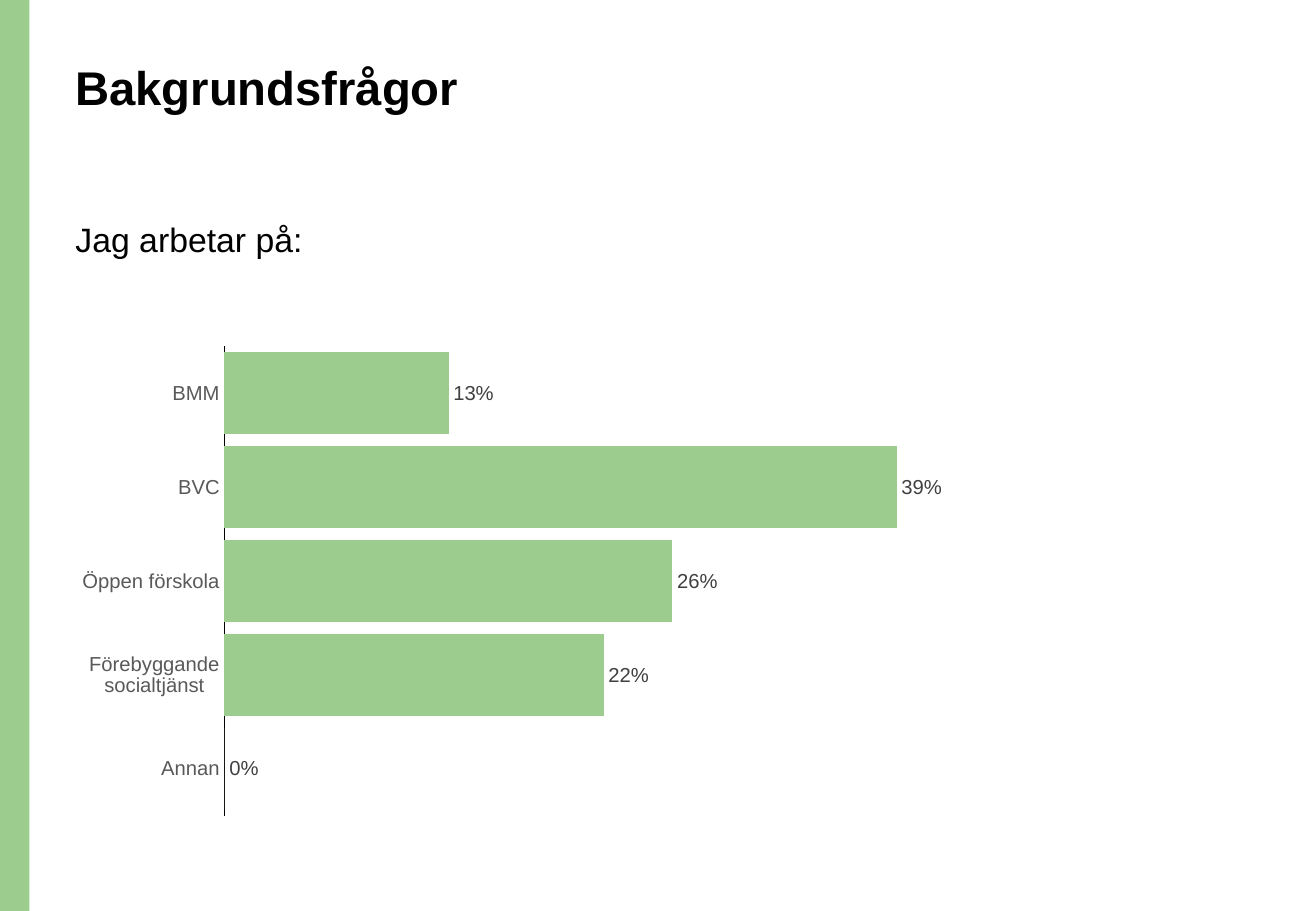
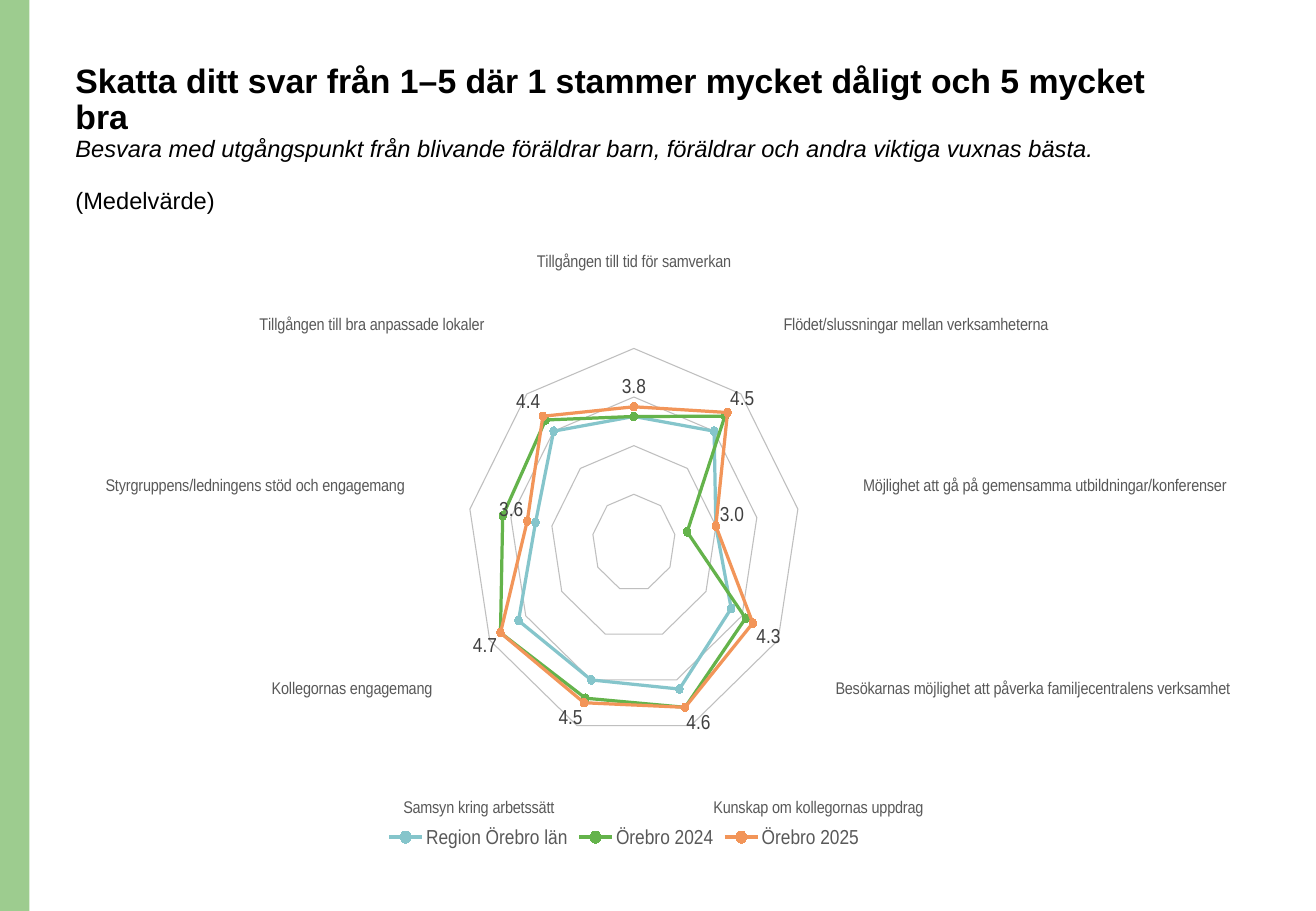
"""Build two survey result slides: a bar chart and a radar chart."""
from lxml import etree
from pptx import Presentation
from pptx.chart.data import CategoryChartData
from pptx.dml.color import RGBColor
from pptx.enum.chart import XL_CHART_TYPE, XL_LEGEND_POSITION, XL_MARKER_STYLE, XL_TICK_MARK
from pptx.enum.shapes import MSO_SHAPE
from pptx.enum.text import MSO_ANCHOR, MSO_AUTO_SIZE, PP_ALIGN
from pptx.oxml import parse_xml
from pptx.oxml.ns import nsdecls, qn
from pptx.util import Pt

BAR, RADAR = XL_CHART_TYPE.BAR_CLUSTERED, XL_CHART_TYPE.RADAR_MARKERS
BOTTOM, CIRCLE, NO_TICK = XL_LEGEND_POSITION.BOTTOM, XL_MARKER_STYLE.CIRCLE, XL_TICK_MARK.NONE
RECT, TOP, LEFT, NO_FIT = MSO_SHAPE.RECTANGLE, MSO_ANCHOR.TOP, PP_ALIGN.LEFT, MSO_AUTO_SIZE.NONE

GREEN = RGBColor(0x9D, 0xCC, 0x8F)
BLACK = RGBColor(0, 0, 0)
AXIS_GREY = RGBColor(0x59, 0x59, 0x59)
LABEL_GREY = RGBColor(0x40, 0x40, 0x40)
SPOKE_GREY = RGBColor(0xD9, 0xD9, 0xD9)
RING_GREY = RGBColor(0xBF, 0xBF, 0xBF)
TEAL = RGBColor(0x85, 0xC5, 0xCB)
LEAF = RGBColor(0x64, 0xB3, 0x4B)
ORANGE = RGBColor(0xF2, 0x95, 0x59)

MARGIN, TITLE_TOP, TITLE_W = 37.5, 34.5, 672.5


def set_font(font, size, color=BLACK, **extra):
    fmt = {"name": "Arial", "size": Pt(size), **extra}
    for key, value in fmt.items():
        setattr(font, key, value)
    font.color.rgb = color


def fill_text(sp, box, lines):
    for key, value in zip(("left", "top", "width", "height"), box):
        setattr(sp, key, Pt(value))
    tf = sp.text_frame
    for key, value in {"word_wrap": True, "auto_size": NO_FIT, "vertical_anchor": TOP}.items():
        setattr(tf, key, value)
    for i, (text, before, fmt) in enumerate(lines):
        p = tf.add_paragraph() if i else tf.paragraphs[0]
        for key, value in {"alignment": LEFT, "line_spacing": 0.9, "space_before": Pt(before)}.items():
            setattr(p, key, value)
        r = p.add_run()
        r.text = text
        set_font(r.font, **fmt)


prs = Presentation()
prs.slide_width, prs.slide_height = Pt(780), Pt(540)

s1 = prs.slides.add_slide(prs.slide_layouts[1])
s2 = prs.slides.add_slide(prs.slide_layouts[5])

band = s1.shapes.add_shape(RECT, 0, 0, Pt(17.5), prs.slide_height)
band.shadow.inherit = False
band.fill.solid()
band.fill.fore_color.rgb = GREEN
band.line.fill.background()
prs.slide_master.shapes.element.insert(2, band.element)

fill_text(s1.shapes.title, (MARGIN, TITLE_TOP, TITLE_W, 73.5),
          [("Bakgrundsfrågor", 0, {"size": 28, "bold": True})])
body = s1.placeholders[1]
fill_text(body, (MARGIN, 129, 434, 53), [("Jag arbetar på:", 10, {"size": 20})])
pPr = body.text_frame.paragraphs[0]._p.get_or_add_pPr()
pPr.set("marL", "0")
pPr.set("indent", "0")
etree.SubElement(pPr, qn("a:buNone"))

fill_text(s2.shapes.title, (MARGIN, TITLE_TOP, TITLE_W, 78), [
    ("Skatta ditt svar från 1–5 där 1 stammer mycket dåligt och 5 mycket bra", 0,
     {"size": 20, "bold": True}),
    ("Besvara med utgångspunkt från blivande föräldrar barn, föräldrar och andra viktiga vuxnas bästa.", 0,
     {"size": 14, "bold": False, "italic": True}),
    ("(Medelvärde)", 15.5, {"size": 14, "bold": False}),
])

workplaces = ["BMM", "BVC", "Öppen förskola", "Förebyggande socialtjänst", "Annan"]
topics = [
    "Tillgången till tid för samverkan",
    "Tillgången till bra anpassade lokaler",
    "Styrgruppens/ledningens stöd och engagemang",
    "Kollegornas engagemang",
    "Samsyn kring arbetssätt",
    "Kunskap om kollegornas uppdrag",
    "Besökarnas möjlighet att påverka familjecentralens verksamhet",
    "Möjlighet att gå på gemensamma utbildningar/konferenser",
    "Flödet/slussningar mellan verksamheterna",
]
shares = [("Series 1", GREEN, [0.13, 0.39, 0.26, 0.22, 0])]
ratings = [
    ("Region Örebro län", TEAL, [3.6, 4, 3.4, 4.2, 4, 4.2, 3.7, 3, 4]),
    ("Örebro 2024", LEAF, [3.6, 4.3, 4.2, 4.7, 4.4, 4.6, 4.1, 2.3, 4.4]),
    ("Örebro 2025", ORANGE, [3.8, 4.4, 3.6, 4.7, 4.5, 4.6, 4.3, 3, 4.5]),
]

charts = []
for s, kind, box, cats, series, num_fmt, cat_size in (
    (s1, BAR, (MARGIN, 199.5, 566.5, 290), workplaces, shares, "0%", 12),
    (s2, RADAR, (62.5, 134.5, 672.5, 371), topics, ratings, "#,##0.0", 10),
):
    data = CategoryChartData(number_format=num_fmt)
    data.categories = cats
    for name, _, values in series:
        data.add_series(name, values)
    chart = s.shapes.add_chart(kind, *map(Pt, box), data).chart
    chart.has_title = False
    chart.has_legend = False
    set_font(chart.font, 10)
    chart.plots[0].vary_by_categories = False

    axis = chart.category_axis
    axis.reverse_order = True
    axis.major_tick_mark = NO_TICK
    axis.format.line.color.rgb = BLACK
    axis.format.line.width = Pt(0.75)
    set_font(axis.tick_labels.font, cat_size, AXIS_GREY)
    chart.value_axis.visible = False

    labels = chart.series[-1].data_labels
    fmt = {"show_value": True, "number_format": num_fmt, "number_format_is_linked": False}
    for key, value in fmt.items():
        setattr(labels, key, value)
    set_font(labels.font, 12, LABEL_GREY)
    charts.append(chart)

bars, radar = charts
bars.value_axis.has_major_gridlines = False
bars.plots[0].gap_width = 15
fill = bars.series[0].format.fill
fill.solid()
fill.fore_color.rgb = GREEN

for key, value in {"minimum_scale": 1, "maximum_scale": 5.9, "major_unit": 1}.items():
    setattr(radar.value_axis, key, value)
for axis, color, width in ((radar.category_axis, SPOKE_GREY, 0.75), (radar.value_axis, RING_GREY, 0)):
    line = axis.major_gridlines.format.line
    line.color.rgb = color
    line.width = Pt(width)
for ser, (_, color, _) in zip(radar.series, ratings):
    ser.format.line.color.rgb = color
    ser.format.line.width = Pt(2.25)
    ser.marker.style = CIRCLE
    ser.marker.size = 5
    ser.marker.format.fill.solid()
    ser.marker.format.fill.fore_color.rgb = color
    ser.marker.format.line.color.rgb = color

radar.has_legend = True
radar.legend.position = BOTTOM
radar.legend.include_in_layout = False
set_font(radar.legend.font, 12, AXIS_GREY)

plot_area = radar.element.find(".//" + qn("c:plotArea"))
for old in plot_area.findall(qn("c:layout")):
    plot_area.remove(old)
frame = {"layoutTarget": "inner", "xMode": "edge", "yMode": "edge",
         "x": 0.3, "y": 0.1, "w": 0.42, "h": 0.81}
parts = "".join(f'<c:{tag} val="{val}"/>' for tag, val in frame.items())
plot_area.insert(0, parse_xml(
    f'<c:layout {nsdecls("c")}><c:manualLayout>{parts}</c:manualLayout></c:layout>'))

prs.save("out.pptx")
